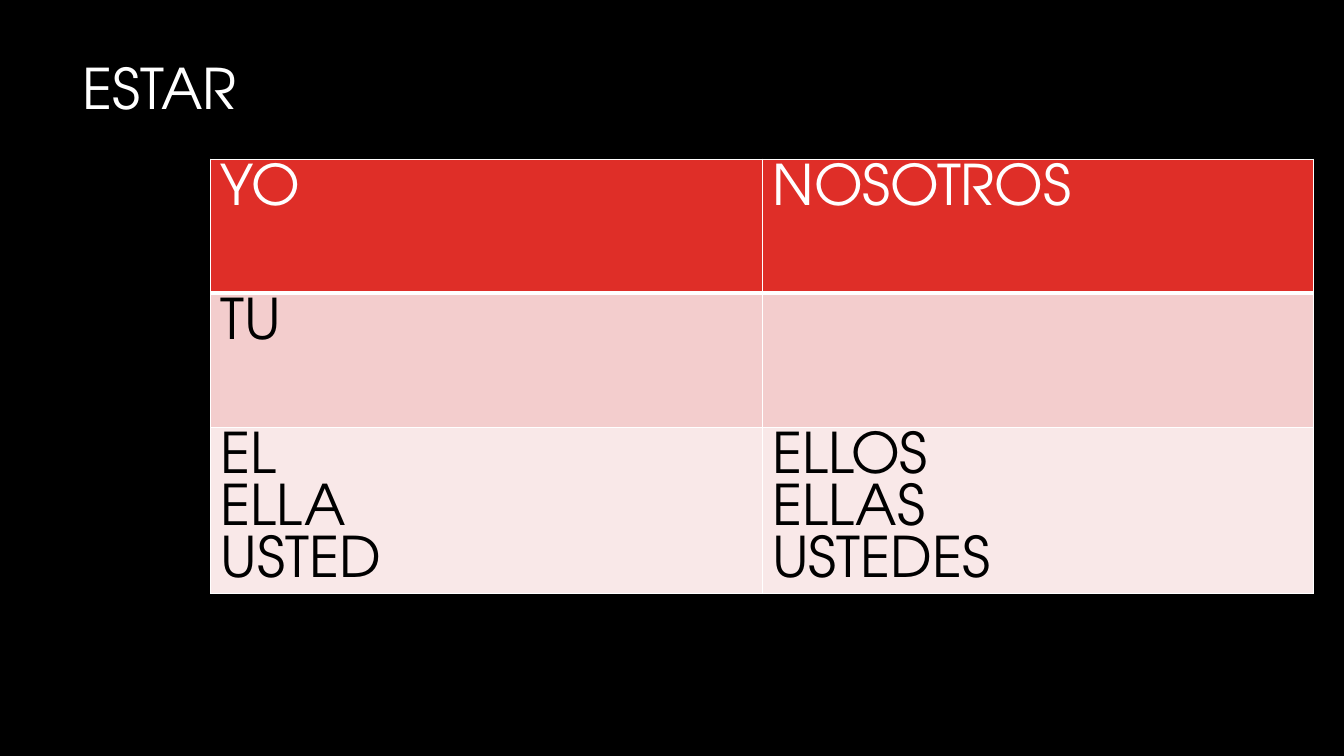
import pptx
import pptx.dml.color
import pptx.enum.text
import pptx.oxml
import pptx.oxml.ns
import pptx.util

RGBColor = pptx.dml.color.RGBColor
Inches = pptx.util.Inches
Pt = pptx.util.Pt

BLACK = RGBColor(0x00, 0x00, 0x00)
WHITE = RGBColor(0xFF, 0xFF, 0xFF)
RED = RGBColor(0xDF, 0x2E, 0x28)
PINK = RGBColor(0xF3, 0xCD, 0xCD)
PALE_PINK = RGBColor(0xF9, 0xE8, 0xE8)

FONT = "TeX Gyre Adventor"
SIDES = ("lnL", "lnR", "lnT", "lnB")

# Each row: fill, text colour, bottom border width, then the two cells
PRONOUN_ROWS = [
    (RED, WHITE, 3, ("YO", "NOSOTROS")),
    (PINK, BLACK, 1, ("TU", "")),
    (PALE_PINK, BLACK, 1, ("EL\nELLA\nUSTED", "ELLOS\nELLAS\nUSTEDES")),
]


def write_text(frame, text, color, size=40, align=None, line_spacing=None):
    """Write each line of the text as a paragraph of its own."""
    frame.text = text
    for para in frame.paragraphs:
        para.font.name = FONT
        para.font.size = Pt(size)
        para.font.color.rgb = color
        para.alignment = align
        para.line_spacing = line_spacing


def add_title(page, text, left, top, width, height):
    box = page.shapes.add_textbox(left, top, width, height)
    frame = box.text_frame
    frame.word_wrap = True
    frame.vertical_anchor = pptx.enum.text.MSO_ANCHOR.MIDDLE
    write_text(frame, text, WHITE, align=pptx.enum.text.PP_ALIGN.RIGHT,
               line_spacing=0.9)


def set_borders(cell, bottom_width):
    """Draw white borders; they must precede the fill in the cell's XML."""
    properties = cell._tc.get_or_add_tcPr()
    for index, side in enumerate(SIDES):
        width = Pt(bottom_width if side == "lnB" else 1)
        line = pptx.oxml.parse_xml(
            f'<a:{side} {pptx.oxml.ns.nsdecls("a")} w="{width}">'
            f'<a:solidFill><a:srgbClr val="{WHITE}"/></a:solidFill></a:{side}>')
        properties.insert(index, line)


def add_pronoun_table(page, left, top, column_width, row_height):
    rows, columns = len(PRONOUN_ROWS), len(PRONOUN_ROWS[0][3])
    table = page.shapes.add_table(rows, columns, left, top,
                                  column_width * columns,
                                  row_height * rows).table
    for row, (fill, color, bottom_width, texts) in enumerate(PRONOUN_ROWS):
        for column, text in enumerate(texts):
            cell = table.cell(row, column)
            cell.fill.solid()
            cell.fill.fore_color.rgb = fill
            set_borders(cell, bottom_width)
            write_text(cell.text_frame, text, color)


def main():
    deck = pptx.Presentation()
    deck.slide_width = Inches(13.33)
    deck.slide_height = Inches(7.5)
    page = deck.slides.add_slide(deck.slide_layouts[6])
    page.background.fill.solid()
    page.background.fill.fore_color.rgb = BLACK

    add_pronoun_table(page, Inches(2.09), Inches(1.58),
                      column_width=Inches(5.47), row_height=Inches(1.33))
    add_title(page, "ESTAR ", Inches(0.61), Inches(0.42),
              Inches(1.99), Inches(0.97))
    deck.save("out.pptx")


if __name__ == "__main__":
    main()
